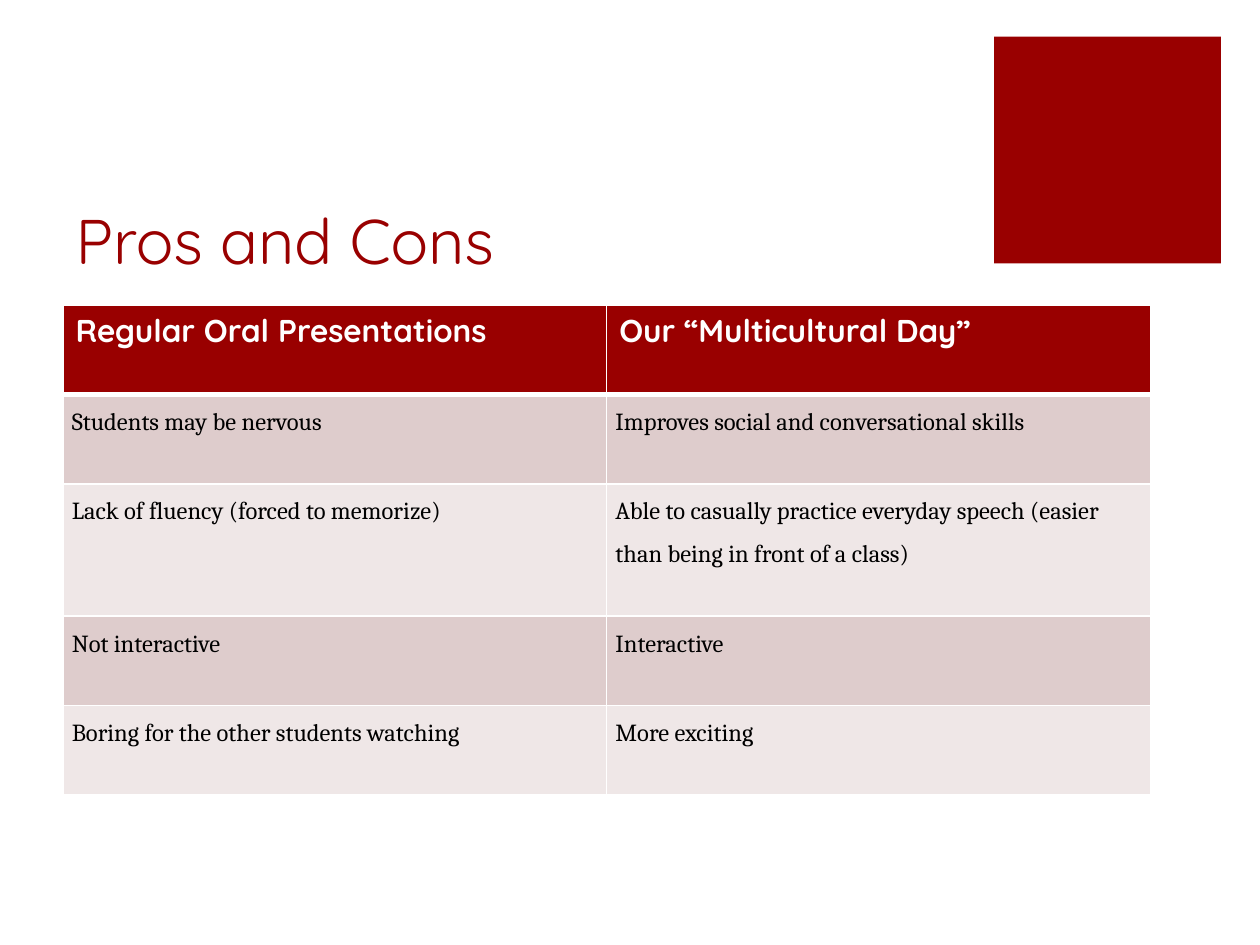
import pptx
import pptx.util
import pptx.dml.color
import pptx.enum.shapes
import pptx.enum.text
import pptx.oxml
import pptx.oxml.ns
from pptx.util import Inches

COLORS = {"red": "990000", "white": "FFFFFF", "black": "000000",
          "dark": "DECCCC", "light": "EFE7E7"}
ROWS = [
    ("Regular Oral Presentations", "Our “Multicultural Day”"),
    ("Students may be nervous", "Improves social and conversational skills"),
    ("Lack of fluency (forced to memorize)",
     "Able to casually practice everyday speech (easier than being in front of a class)"),
    ("Not interactive", "Interactive"),
    ("Boring for the other students watching", "More exciting"),
]
HEIGHTS = [0.71, 0.71, 1.05, 0.71, 0.71]


def style(par, font, size, color, bold=False):
    for run in par.runs:
        run.font.name = font
        run.font.size = pptx.util.Pt(size)
        run.font.bold = bold
        run.font.color.rgb = pptx.dml.color.RGBColor.from_string(COLORS[color])


def border(cell, widths):
    """Draw white cell borders; widths maps L, R, T, B to points."""
    props = cell._tc.get_or_add_tcPr()
    for place, (side, width) in enumerate(widths.items()):
        line = pptx.oxml.parse_xml(
            f'<a:ln{side} {pptx.oxml.ns.nsdecls("a")} w="{pptx.util.Pt(width)}">'
            f'<a:solidFill><a:srgbClr val="{COLORS["white"]}"/></a:solidFill>'
            f'</a:ln{side}>')
        props.insert(place, line)


deck = pptx.Presentation()
deck.slide_width, deck.slide_height = Inches(10), Inches(7.5)
slide = deck.slides.add_slide(deck.slide_layouts[5])

square = slide.shapes.add_shape(pptx.enum.shapes.MSO_SHAPE.RECTANGLE,
                                Inches(7.89), Inches(0.29), Inches(1.8), Inches(1.8))
square.shadow.inherit = False
square.fill.solid()
square.fill.fore_color.rgb = pptx.dml.color.RGBColor.from_string(COLORS["red"])
square.line.fill.background()

title = slide.shapes.title
title.left, title.top = Inches(0.5), Inches(1)
title.width, title.height = Inches(7.12), Inches(1.25)
title.text_frame.text = "Pros and Cons"
title.text_frame.vertical_anchor = pptx.enum.text.MSO_ANCHOR.BOTTOM
head = title.text_frame.paragraphs[0]
head.alignment = pptx.enum.text.PP_ALIGN.LEFT
style(head, "Quicksand", 36, "red")

table = slide.shapes.add_table(len(ROWS), 2, Inches(0.5), Inches(2.42),
                               Inches(8.63), Inches(sum(HEIGHTS))).table
for col in table.columns:
    col.width = Inches(8.63 / 2)

for r, texts in enumerate(ROWS):
    table.rows[r].height = Inches(HEIGHTS[r])
    for c, text in enumerate(texts):
        cell = table.cell(r, c)
        cell.text_frame.text = text
        par = cell.text_frame.paragraphs[0]
        if r == 0:
            fill = "red"
            style(par, "Quicksand", 18, "white", bold=True)
        else:
            fill = "dark" if r % 2 else "light"
            style(par, "Cambria", 14, "black")
            par.line_spacing = 1.5
            cell.margin_left = cell.margin_right = Inches(0.07)
            cell.margin_top = cell.margin_bottom = 0
        cell.fill.solid()
        cell.fill.fore_color.rgb = pptx.dml.color.RGBColor.from_string(COLORS[fill])
        border(cell, {"L": 1, "R": 1, "T": 3 if r == 1 else 1, "B": 3 if r == 0 else 1})

deck.save("out.pptx")
